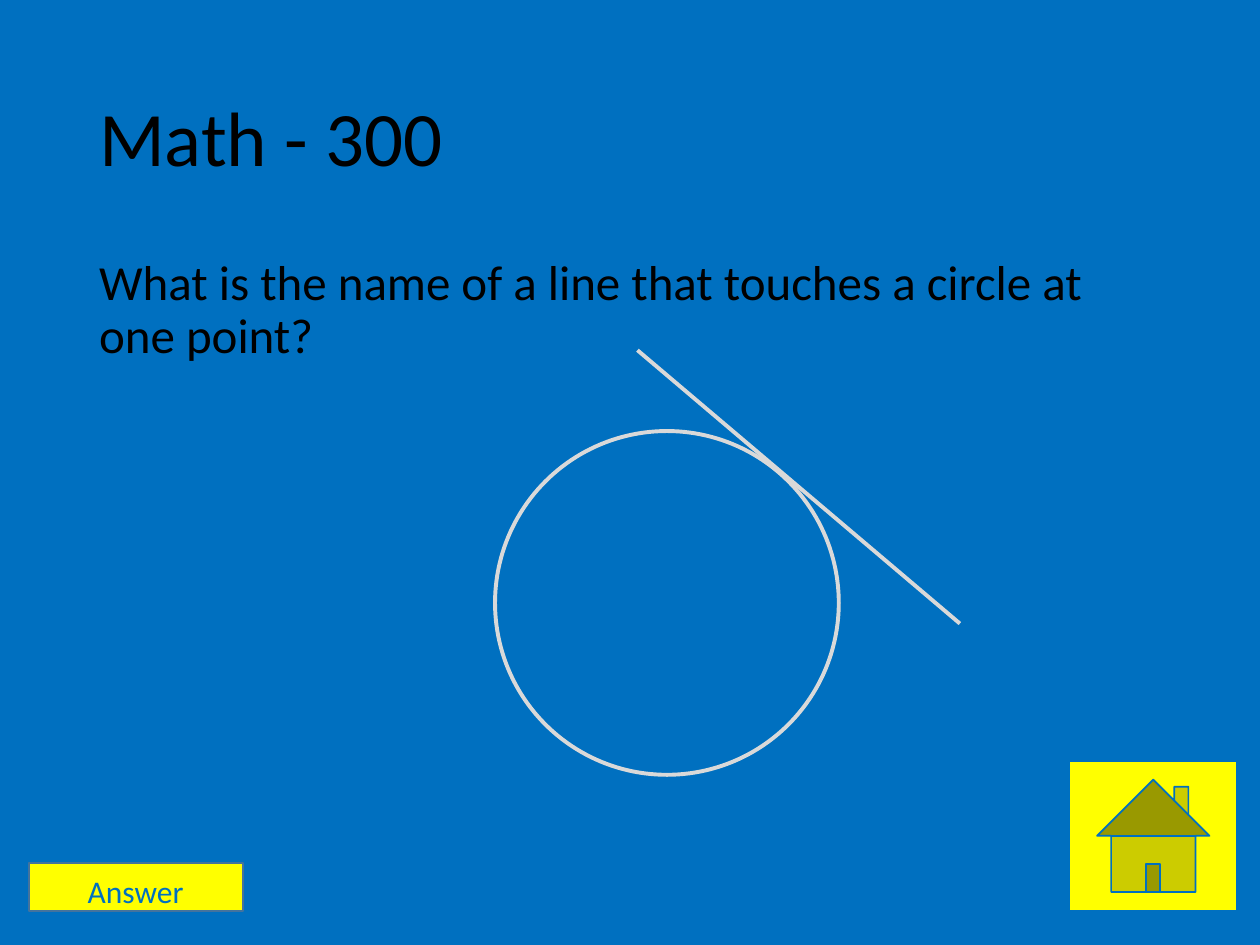
from dataclasses import dataclass

from lxml import etree
from pptx import Presentation
from pptx import util as u
from pptx.dml.color import RGBColor
from pptx.enum import shapes, text
from pptx.oxml import ns


@dataclass(frozen=True)
class Theme:
    font: str = "Calibri"
    blue: str = "0070C0"
    black: str = "000000"
    yellow: str = "FFFF00"
    button_edge: str = "43739E"
    drawing: str = "D9D9D9"
    title_size: int = 44
    question_size: int = 28
    button_size: int = 18
    thin: float = 1
    thick: float = 2.25


THEME = Theme()
SLIDE_SIZE = (25.4, 19.05)
TITLE = ("Math - 300", (1.75, 1.02, 21.89, 3.68))
QUESTION = (
    "What is the name of a line that touches a circle at one point?",
    (1.75, 5.08, 21.89, 12.09),
)
ANSWER = ("Answer", (0.74, 17.45, 3.99, 1.02))
ANSWER_BUTTON = (0.58, 17.4, 4.32, 0.97)
HOME_BUTTON = (21.56, 15.34, 3.38, 3.02)
CIRCLE = (9.98, 8.69, 6.93, 6.93)
TANGENT = (12.85, 7.06, 19.35, 12.57)


def lengths(values):
    return [u.Cm(value) for value in values]


def set_line(line, color, width):
    line.color.rgb = RGBColor.from_string(color)
    line.width = u.Pt(width)


def add_text(parent, content, size, color, anchor=text.MSO_ANCHOR.TOP,
             align=text.PP_ALIGN.LEFT, spacing=1.0, before=0):
    wording, box = content
    frame = parent.add_textbox(*lengths(box)).text_frame
    frame.word_wrap = True
    frame.vertical_anchor = anchor
    paragraph = frame.paragraphs[0]
    paragraph.alignment = align
    paragraph.line_spacing = spacing
    paragraph.space_before = u.Pt(before)
    run = paragraph.add_run()
    run.text = wording
    run.font.name = THEME.font
    run.font.size = u.Pt(size)
    run.font.color.rgb = RGBColor.from_string(color)


def add_figure(parent, kind, box, edge, width, fill=None):
    shape = parent.add_shape(kind, *lengths(box))
    shape.shadow.inherit = False
    if fill:
        shape.fill.solid()
        shape.fill.fore_color.rgb = RGBColor.from_string(fill)
    else:
        shape.fill.background()
    set_line(shape.line, edge, width)


def main():
    """Build the geometry question slide and save it."""
    presentation = Presentation()
    presentation.slide_width, presentation.slide_height = lengths(SLIDE_SIZE)
    slide = presentation.slides.add_slide(presentation.slide_layouts[6])
    slide.background.fill.solid()
    slide.background.fill.fore_color.rgb = RGBColor.from_string(THEME.blue)
    kinds = shapes.MSO_SHAPE

    add_text(slide.shapes, TITLE, THEME.title_size, THEME.black,
             anchor=text.MSO_ANCHOR.MIDDLE, spacing=0.9)
    add_text(slide.shapes, QUESTION, THEME.question_size, THEME.black,
             spacing=0.9, before=10)

    add_figure(slide.shapes, kinds.ACTION_BUTTON_HOME, HOME_BUTTON,
               THEME.blue, THEME.thin, THEME.yellow)
    answer_group = slide.shapes.add_group_shape()
    add_figure(answer_group.shapes, kinds.ACTION_BUTTON_CUSTOM, ANSWER_BUTTON,
               THEME.button_edge, THEME.thin, THEME.yellow)
    add_text(answer_group.shapes, ANSWER, THEME.button_size, THEME.blue,
             align=text.PP_ALIGN.CENTER)

    add_figure(slide.shapes, kinds.OVAL, CIRCLE, THEME.drawing, THEME.thick)
    tangent = slide.shapes.add_connector(
        shapes.MSO_CONNECTOR.STRAIGHT, *lengths(TANGENT))
    set_line(tangent.line, THEME.drawing, THEME.thick)
    etree.SubElement(tangent._element.spPr, ns.qn("a:effectLst"))

    presentation.save("out.pptx")


if __name__ == "__main__":
    main()
